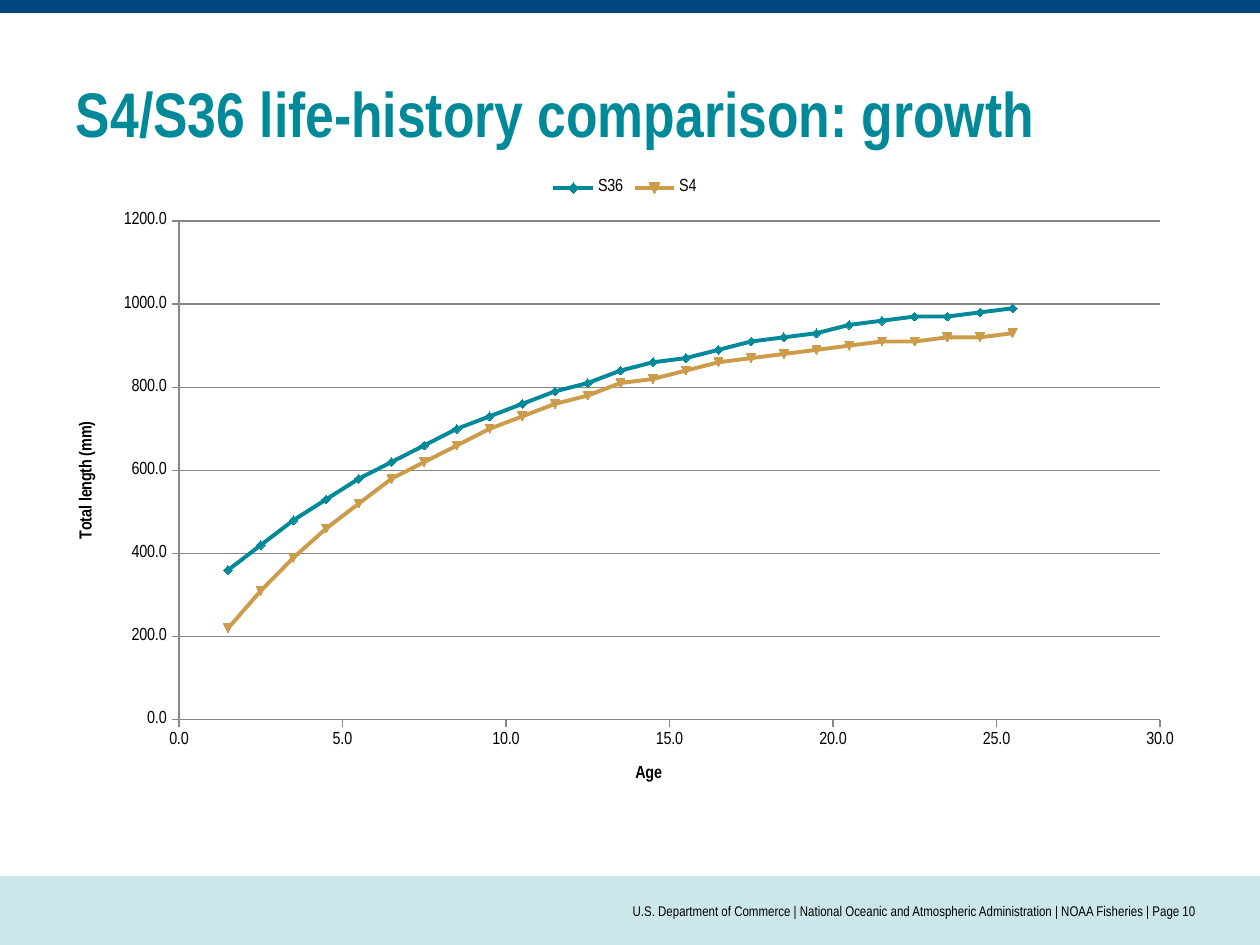
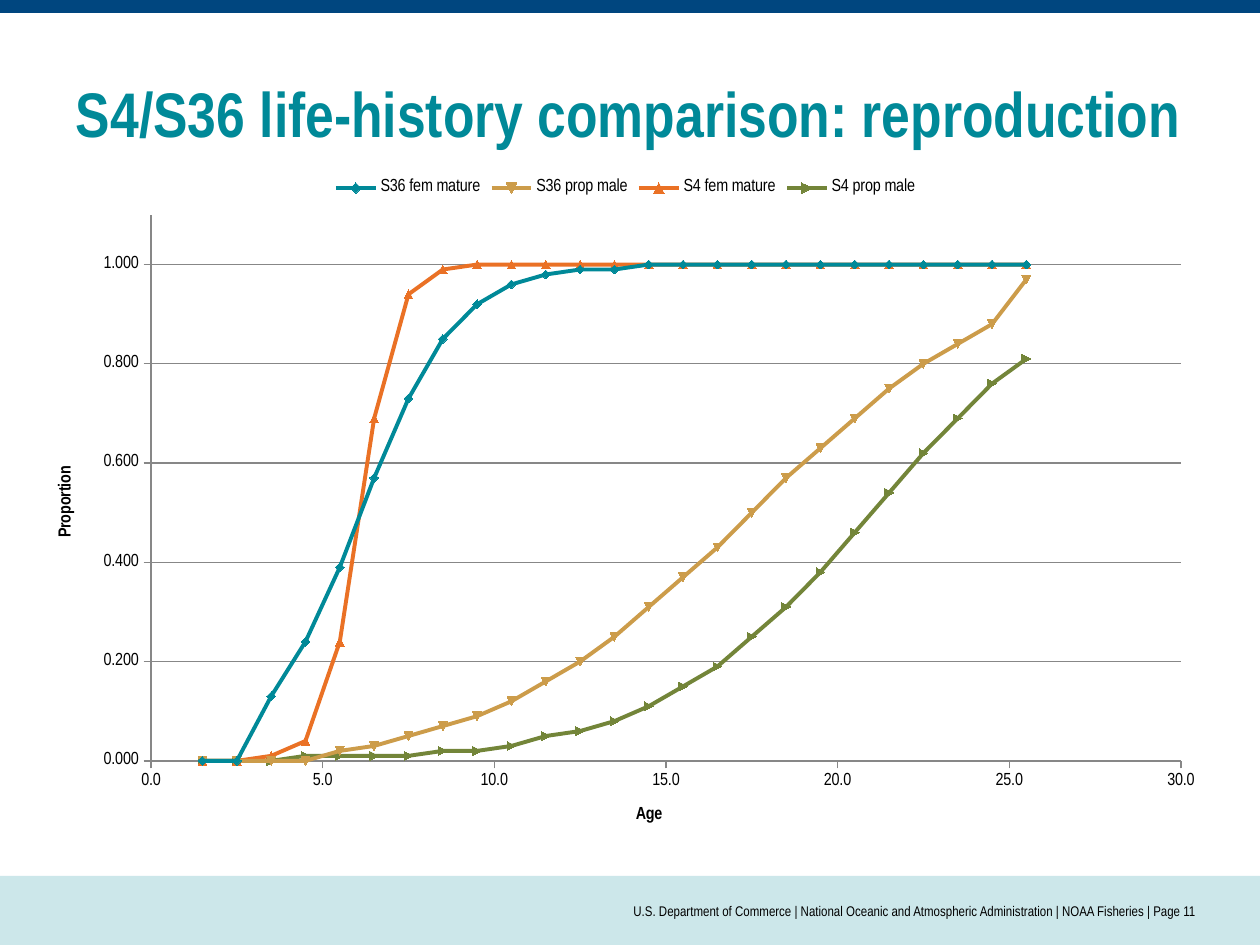
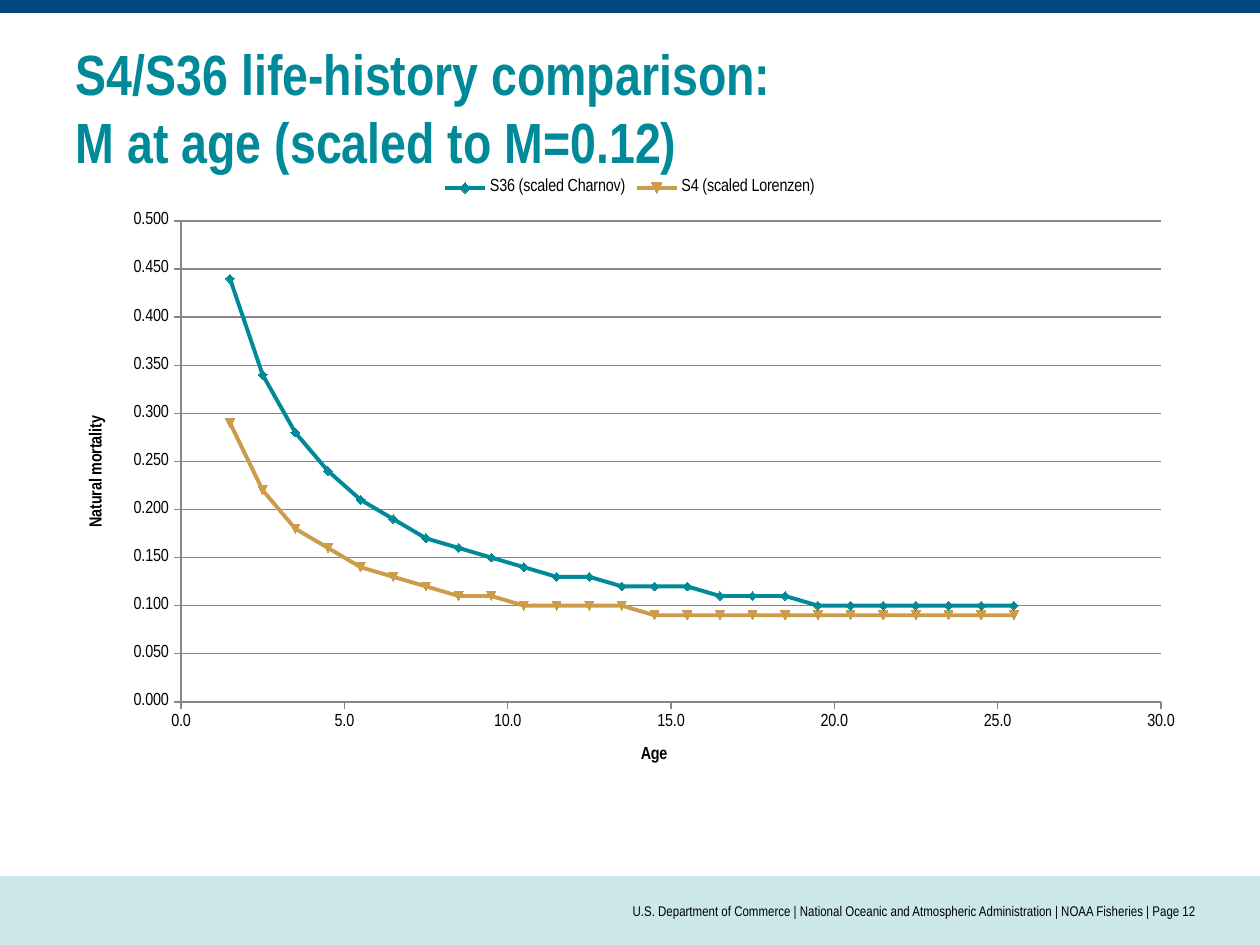
from dataclasses import dataclass

from lxml import etree
from pptx import Presentation
from pptx import util as u
from pptx.chart.data import XyChartData
from pptx.dml.color import RGBColor
from pptx.enum import chart as ch, shapes, text
from pptx.oxml.ns import qn

PX_PER_INCH = 126
W, H = 1260, 945
AGES = [age + 0.5 for age in range(1, 26)]


@dataclass(frozen=True)
class Theme:
    font: str = "Arial Narrow"
    teal: str = "008998"
    gold: str = "CC9C4A"
    orange: str = "EA7125"
    olive: str = "738539"
    navy: str = "00467F"
    pale: str = "CCE7EA"
    black: str = "000000"
    grey: str = "878787"
    title_size: float = 36
    two_line_title_size: float = 32.4
    footer_size: float = 8
    chart_size: float = 10
    curve_width: float = 2.25
    rule_width: float = 0.75


T = Theme()


def px(n):
    return u.Emu(round(n * 914400 / PX_PER_INCH))


def rgb(color):
    return RGBColor.from_string(color)


def style_font(font, size, color, bold=False):
    font.name = T.font
    font.size = u.Pt(size)
    font.bold = bold
    font.color.rgb = rgb(color)


def style_line(line, color, width):
    line.color.rgb = rgb(color)
    line.width = u.Pt(width)


def add_band(s, top, height, color):
    sp = s.shapes.add_shape(shapes.MSO_SHAPE.RECTANGLE, 0, px(top), px(W), px(height))
    sp.shadow.inherit = False
    sp.fill.solid()
    sp.fill.fore_color.rgb = rgb(color)
    sp.line.fill.background()


def add_text(s, box, content, size, color, bold=False, align=text.PP_ALIGN.LEFT,
             anchor=text.MSO_ANCHOR.TOP, inset=(0, 6)):
    """Add a wrapped text box; inset is (sides, top and bottom)."""
    tf = s.shapes.add_textbox(*map(px, box)).text_frame
    tf.word_wrap = True
    tf.vertical_anchor = anchor
    tf.margin_left = tf.margin_right = px(inset[0])
    tf.margin_top = tf.margin_bottom = px(inset[1])
    tf.text = content
    for p in tf.paragraphs:
        p.alignment = align
        for r in p.runs:
            style_font(r.font, size, color, bold)


def add_slide(prs, page, title, title_top=63, title_size=T.title_size):
    s = prs.slides.add_slide(prs.slide_layouts[6])
    add_band(s, 876, 69, T.pale)
    add_band(s, 0, 13, T.navy)
    add_text(s, (63, title_top, 1134, 93), title, title_size, T.teal, bold=True,
             inset=(13, 11))
    footer = " | ".join(["U.S. Department of Commerce",
                         "National Oceanic and Atmospheric Administration",
                         "NOAA Fisheries", f"Page {page}"])
    add_text(s, (315, 876, 882, 69), footer, T.footer_size, T.black,
             align=text.PP_ALIGN.RIGHT, anchor=text.MSO_ANCHOR.MIDDLE)
    return s


def style_axis(axis, title, top, step, number_format):
    axis.minimum_scale, axis.maximum_scale, axis.major_unit = 0, top, step
    axis.major_tick_mark = ch.XL_TICK_MARK.OUTSIDE
    axis.minor_tick_mark = ch.XL_TICK_MARK.NONE
    axis.tick_labels.number_format = number_format
    axis.tick_labels.number_format_is_linked = False
    style_line(axis.format.line, T.grey, T.rule_width)
    tf = axis.axis_title.text_frame
    tf.text = title
    style_font(tf.paragraphs[0].runs[0].font, T.chart_size, T.black, bold=True)


def place_plot(chart, box, plot):
    """Fix the inner plot area, given like box in slide px."""
    area = chart._chartSpace.chart.plotArea
    for old in area.findall(qn("c:layout")):
        area.remove(old)
    layout = etree.Element(qn("c:layout"))
    area.insert(0, layout)
    manual = etree.SubElement(layout, qn("c:manualLayout"))
    settings = {"layoutTarget": "inner", "xMode": "edge", "yMode": "edge",
                "x": (plot[0] - box[0]) / box[2], "y": (plot[1] - box[1]) / box[3],
                "w": plot[2] / box[2], "h": plot[3] / box[3]}
    for tag, value in settings.items():
        etree.SubElement(manual, qn(f"c:{tag}")).set("val", str(value))


def add_age_chart(s, box, plot, y_title, y_top, y_step, y_format, curves):
    """Plot curves, a list of (name, color, values), against age."""
    data = XyChartData()
    for name, _, values in curves:
        series = data.add_series(name)
        for age, value in zip(AGES, values):
            series.add_data_point(age, value)
    chart = s.shapes.add_chart(ch.XL_CHART_TYPE.XY_SCATTER_LINES,
                               *map(px, box), data).chart
    chart.has_title = False
    style_font(chart.font, T.chart_size, T.black)
    chart.has_legend = True
    chart.legend.position = ch.XL_LEGEND_POSITION.TOP
    chart.legend.include_in_layout = False
    chart.plots[0].vary_by_categories = False
    for series, (_, color, _) in zip(chart.plots[0].series, curves):
        series.smooth = False
        style_line(series.format.line, color, T.curve_width)
    style_axis(chart.category_axis, "Age", 30, 5, "0.0")
    style_axis(chart.value_axis, y_title, y_top, y_step, y_format)
    chart.category_axis.has_major_gridlines = False
    chart.value_axis.has_major_gridlines = True
    style_line(chart.value_axis.major_gridlines.format.line, T.grey, T.rule_width)
    place_plot(chart, box, plot)


GROWTH = [
    ("S36", T.teal,
     [360, 420, 480, 530, 580, 620, 660, 700, 730, 760, 790, 810, 840, 860, 870,
      890, 910, 920, 930, 950, 960, 970, 970, 980, 990]),
    ("S4", T.gold,
     [220, 310, 390, 460, 520, 580, 620, 660, 700, 730, 760, 780, 810, 820, 840,
      860, 870, 880, 890, 900, 910, 910, 920, 920, 930]),
]
REPRODUCTION = [
    ("S36 fem mature", T.teal,
     [0, 0, 0.13, 0.24, 0.39, 0.57, 0.73, 0.85, 0.92, 0.96, 0.98, 0.99, 0.99]
     + [1] * 12),
    ("S36 prop male", T.gold,
     [0, 0, 0, 0, 0.02, 0.03, 0.05, 0.07, 0.09, 0.12, 0.16, 0.2, 0.25, 0.31, 0.37,
      0.43, 0.5, 0.57, 0.63, 0.69, 0.75, 0.8, 0.84, 0.88, 0.97]),
    ("S4 fem mature", T.orange,
     [0, 0, 0.01, 0.04, 0.24, 0.69, 0.94, 0.99] + [1] * 17),
    ("S4 prop male", T.olive,
     [0, 0, 0, 0.01, 0.01, 0.01, 0.01, 0.02, 0.02, 0.03, 0.05, 0.06, 0.08, 0.11,
      0.15, 0.19, 0.25, 0.31, 0.38, 0.46, 0.54, 0.62, 0.69, 0.76, 0.81]),
]
MORTALITY = [
    ("S36 (scaled Charnov)", T.teal,
     [0.44, 0.34, 0.28, 0.24, 0.21, 0.19, 0.17, 0.16, 0.15, 0.14, 0.13, 0.13,
      0.12, 0.12, 0.12, 0.11, 0.11, 0.11] + [0.1] * 7),
    ("S4 (scaled Lorenzen)", T.gold,
     [0.29, 0.22, 0.18, 0.16, 0.14, 0.13, 0.12, 0.11, 0.11]
     + [0.1] * 4 + [0.09] * 12),
]


def main():
    prs = Presentation()
    prs.slide_width, prs.slide_height = px(W), px(H)

    s = add_slide(prs, 10, "S4/S36 life-history comparison: growth")
    add_age_chart(s, (53, 166, 1144, 643), (179, 221, 981, 499),
                  "Total length (mm)", 1200, 200, "0.0", GROWTH)

    s = add_slide(prs, 11, "S4/S36 life-history comparison: reproduction")
    add_age_chart(s, (32, 166, 1187, 684), (151, 215, 1030, 546),
                  "Proportion", 1.1, 0.2, "0.000", REPRODUCTION)

    s = add_slide(prs, 12, "S4/S36 life-history comparison: \vM at age (scaled to M=0.12)",
                  title_top=28, title_size=T.two_line_title_size)
    add_age_chart(s, (63, 166, 1134, 624), (181, 221, 980, 481),
                  "Natural mortality", 0.5, 0.05, "0.000", MORTALITY)

    prs.save("out.pptx")


if __name__ == "__main__":
    main()
